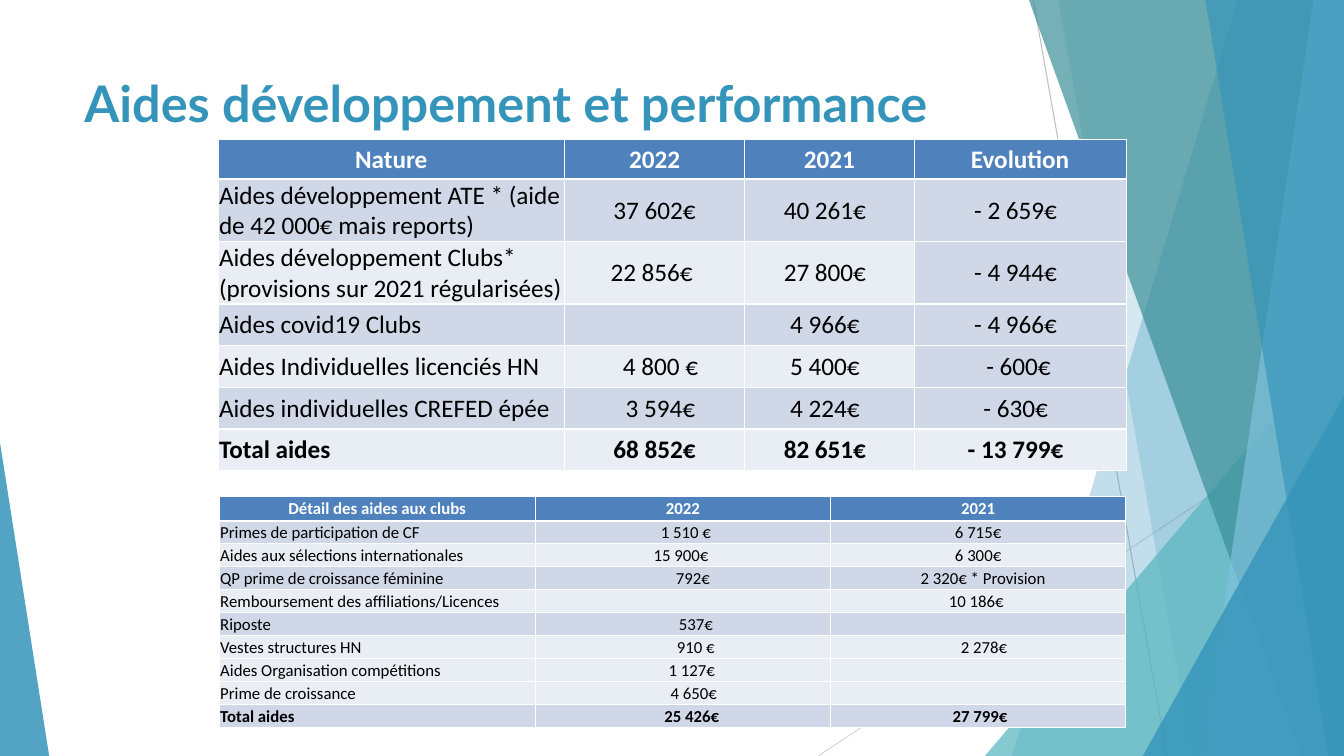
"""Build the slide of development and performance grants."""
from lxml import etree
from pptx import Presentation
from pptx.dml.color import RGBColor
from pptx.enum.shapes import MSO_CONNECTOR, MSO_SHAPE
from pptx.enum.text import MSO_ANCHOR, PP_ALIGN
from pptx.oxml.ns import qn
from pptx.util import Cm, Pt

LEFT, CENTER = PP_ALIGN.LEFT, PP_ALIGN.CENTER
MIDDLE = MSO_ANCHOR.MIDDLE
TRIANGLE, STRAIGHT = MSO_SHAPE.ISOSCELES_TRIANGLE, MSO_CONNECTOR.STRAIGHT

THEME = {
    "accent": "3494BA", "aqua": "58B6C0", "teal": "3A8F98", "sky": "7FC1DB",
    "white": "FFFFFF", "black": "000000", "header": "4F81BD",
    "D": "D0D8E8", "L": "E9EDF4", "line_dark": "BFBFBF", "line_light": "D9D9D9",
    "title_font": "Lato", "table_font": "Calibri",
    "title_size": 36, "grants_size": 18, "clubs_size": 12,
}
WIDTH, HEIGHT = 33.87, 19.05
INSET = 0.02

TITLE = "Aides développement et performance"
LINES = [
    ((26.04, 0), (29.41, HEIGHT), "line_dark"),
    ((WIDTH, 10.24), (20.62, HEIGHT), "line_light"),
]
FACETS = [
    {"top": 31.19, "bottom": 25.5, "color": "accent", "alpha": 30},
    {"top": 26.67, "bottom": 30.05, "color": "accent", "alpha": 20},
    {"box": (24.82, 8.46, 9.05, 10.59), "apex": 1, "color": "aqua", "alpha": 72},
    {"top": 25.93, "bottom": 32.79, "color": "teal", "alpha": 70},
    {"top": 33.1, "bottom": 30.28, "color": "sky", "alpha": 70},
    {"top": 30.38, "bottom": 33.48, "color": "accent", "alpha": 65},
    {"box": (28.8, 9.98, 5.07, 9.07), "apex": 1, "color": "accent", "alpha": 80},
    {"box": (0, 11.15, 1.24, 7.9), "apex": 0, "color": "accent", "alpha": 85},
]
GRANTS = {
    "at": (5.5, 3.52), "size": "grants_size", "bands": "DLDLDL",
    "cols": [8.72, 4.55, 4.27, 5.34],
    "rows": [1, 1.57, 1.57, 1.05, 1.05, 1.05, 1.05],
    "right": [INSET, INSET, 0.25, 0.25], "shaded_col": 3,
    "nudges": {(4, 1): 0.3, (5, 1): 0.3, (4, 3): 0.15},
    "cells": [
        ["Nature", "2022", "2021", "Evolution"],
        ["Aides développement ATE * (aide de 42 000€ mais reports)",
         "37 602€", "40 261€", "- 2 659€"],
        ["Aides développement Clubs* (provisions sur 2021 régularisées)",
         "22 856€ ", "27 800€", "- 4 944€"],
        ["Aides covid19 Clubs", "", "4 966€", "- 4 966€"],
        ["Aides Individuelles licenciés HN", "4 800 €", "5 400€", "- 600€"],
        ["Aides individuelles CREFED épée", "3 594€", "4 224€", "- 630€"],
        ["Total aides", "68 852€", "82 651€", "- 13 799€"],
    ],
}
CLUBS = {
    "at": (5.53, 12.52), "size": "clubs_size", "bands": "DLDLDLLLD",
    "cols": [7.96, 7.44, 7.44],
    "rows": [0.6] + [0.58] * 9,
    "right": [INSET] * 3, "shaded_col": None,
    "nudges": {(1, 1): 0.15, (3, 1): 0.5, (5, 1): 0.65, (6, 1): 0.65, (7, 1): 0.45,
               (8, 1): 0.55, (9, 1): 0.45, (3, 2): 0.25, (6, 2): 0.3, (9, 2): 0.1},
    "cells": [
        ["Détail des aides aux clubs", "2022", "2021"],
        ["Primes de participation de CF", "1 510 €", "6 715€"],
        ["Aides aux sélections internationales", "15 900€ ", "6 300€"],
        ["QP prime de croissance féminine", "792€", "2 320€ * Provision"],
        ["Remboursement des affiliations/Licences", "", "10 186€ "],
        ["Riposte", "537€", ""],
        ["Vestes structures HN", "910 €", "2 278€"],
        ["Aides Organisation compétitions", "1 127€", ""],
        ["Prime de croissance", "4 650€", ""],
        ["Total aides", "25 426€", "27 799€"],
    ],
}


def rgb(name):
    return RGBColor.from_string(THEME[name])


def write(tf, text, font="table_font", size="clubs_size", color="black", bold=False, align=LEFT):
    tf.word_wrap = True
    p = tf.paragraphs[0]
    p.alignment = align
    if not text:
        etree.SubElement(p._p, qn("a:endParaRPr"), sz=str(THEME[size] * 100))
        return
    r = p.add_run()
    r.text = text
    r.font.name, r.font.size, r.font.bold = THEME[font], Pt(THEME[size]), bold
    r.font.color.rgb = rgb(color)


def add_line(s, start, end, color):
    line = s.shapes.add_connector(STRAIGHT, *map(Cm, start + end))
    line.line.color.rgb, line.line.width = rgb(color), Pt(0.75)
    etree.SubElement(line._element.spPr, qn("a:effectLst"))


def add_facet(s, facet):
    if "box" in facet:
        sp = s.shapes.add_shape(TRIANGLE, *map(Cm, facet["box"]))
        sp.adjustments[0] = facet["apex"]
    else:
        corners = [(WIDTH, 0), (WIDTH, HEIGHT), (facet["bottom"], HEIGHT)]
        outline = s.shapes.build_freeform(Cm(facet["top"]), 0)
        outline.add_line_segments([(Cm(x), Cm(y)) for x, y in corners])
        sp = outline.convert_to_shape()
    sp.shadow.inherit = False
    sp.line.fill.background()
    sp.fill.solid()
    sp.fill.fore_color.rgb = rgb(facet["color"])
    color = sp._element.spPr.find(".//" + qn("a:srgbClr"))
    etree.SubElement(color, qn("a:alpha"), val=str(facet["alpha"] * 1000))


def add_borders(cell, row):
    tc_pr = cell._tc.get_or_add_tcPr()
    heavy = {0: "B", 1: "T"}.get(row)
    for i, side in enumerate("LRTB"):
        width = Pt(1.5 if side == heavy else 1)
        ln = etree.Element(qn("a:ln" + side), w=str(width))
        fill = etree.SubElement(ln, qn("a:solidFill"))
        etree.SubElement(fill, qn("a:srgbClr"), val=THEME["white"])
        tc_pr.insert(i, ln)


def add_grid(s, data):
    cols, rows = data["cols"], data["rows"]
    box = (*data["at"], sum(cols), sum(rows))
    table = s.shapes.add_table(len(rows), len(cols), *map(Cm, box)).table
    for col, width in zip(table.columns, cols):
        col.width = Cm(width)
    last = len(rows) - 1
    for i, texts in enumerate(data["cells"]):
        table.rows[i].height = Cm(rows[i])
        for j, text in enumerate(texts):
            cell = table.cell(i, j)
            band = "header" if i == 0 else data["bands"][i - 1]
            if j == data["shaded_col"] and 0 < i < last:
                band = "D"
            cell.fill.solid()
            cell.fill.fore_color.rgb = rgb(band)
            cell.vertical_anchor = MIDDLE
            cell.margin_left = Cm(INSET + data["nudges"].get((i, j), 0))
            cell.margin_right = Cm(data["right"][j] if i else INSET)
            cell.margin_top, cell.margin_bottom = Cm(INSET), 0
            write(cell.text_frame, text, size=data["size"], bold=i in (0, last),
                  color="black" if i else "white", align=CENTER if j or not i else LEFT)
            add_borders(cell, i)


def main():
    prs = Presentation()
    prs.slide_width, prs.slide_height = Cm(WIDTH), Cm(HEIGHT)
    s = prs.slides.add_slide(prs.slide_layouts[6])
    for line in LINES:
        add_line(s, *line)
    for facet in FACETS:
        add_facet(s, facet)
    title = s.shapes.add_textbox(Cm(1.88), Cm(1.7), Cm(23.88), Cm(3.66))
    write(title.text_frame, TITLE, font="title_font", size="title_size", color="accent", bold=True)
    add_grid(s, GRANTS)
    add_grid(s, CLUBS)
    prs.save("out.pptx")


if __name__ == "__main__":
    main()
